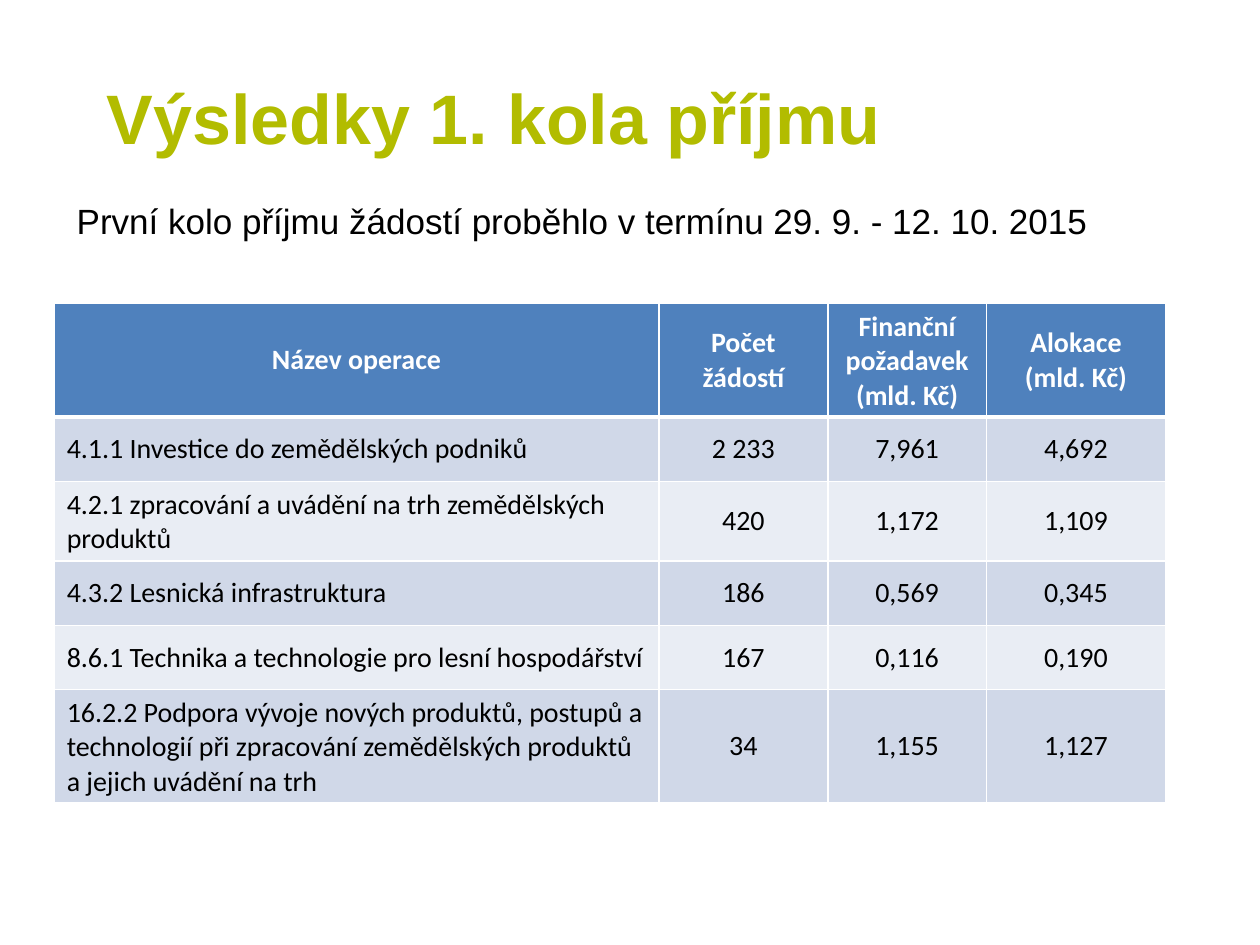
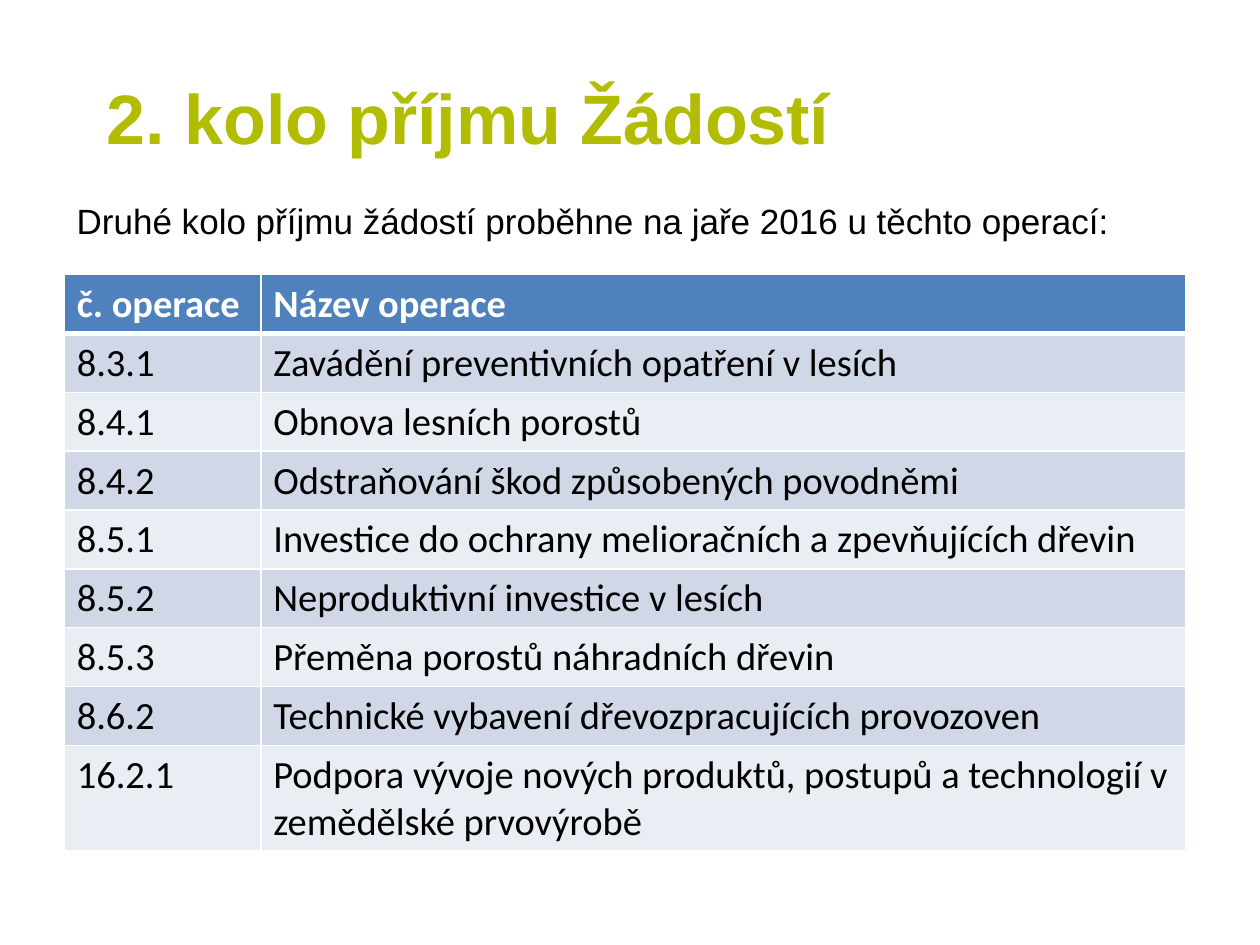
from dataclasses import dataclass

from lxml import etree
from pptx import Presentation
from pptx.dml.color import RGBColor
from pptx.enum.text import MSO_ANCHOR, PP_ALIGN
from pptx.oxml.ns import qn
from pptx.slide import Slide
from pptx.table import _Cell
from pptx.util import Pt

LEFT, CENTER = PP_ALIGN.LEFT, PP_ALIGN.CENTER
TOP, MIDDLE = MSO_ANCHOR.TOP, MSO_ANCHOR.MIDDLE
BLANK_LAYOUT = 6


@dataclass(frozen=True)
class Theme:
    title_color: str = "B2BC00"
    text_color: str = "000000"
    header_text: str = "FFFFFF"
    header_fill: str = "4F81BD"
    band_fills: tuple[str, str] = ("D0D8E8", "E9EDF4")
    grid_color: str = "FFFFFF"
    grid_width: float = 1
    header_rule: float = 3
    text_font: str = "Arial"
    table_font: str = "Calibri"
    title_size: float = 40
    lead_size: float = 20


THEME = Theme()


@dataclass(frozen=True)
class Box:
    left: float
    top: float
    width: float
    height: float

    def emu(self) -> tuple[Pt, Pt, Pt, Pt]:
        return Pt(self.left), Pt(self.top), Pt(self.width), Pt(self.height)


@dataclass(frozen=True)
class TextStyle:
    size: float
    color: str
    font: str
    bold: bool = False


@dataclass(frozen=True)
class OperationTable:
    box: Box
    columns: tuple[float, ...]
    row_heights: tuple[float, ...]
    size: float
    anchor: MSO_ANCHOR
    header_align: PP_ALIGN
    value_align: PP_ALIGN
    rows: tuple[tuple[str, ...], ...]


@dataclass(frozen=True)
class RoundSlide:
    title: str
    lead: str
    operations: OperationTable


# Shared frame of both slides
TITLE_BOX = Box(54, 21.6, 583.92, 90)
LEAD_BOX = Box(36.72, 105.84, 635.04, 368.64)
TITLE_STYLE = TextStyle(THEME.title_size, THEME.title_color, THEME.text_font, True)
LEAD_STYLE = TextStyle(THEME.lead_size, THEME.text_color, THEME.text_font)

# Content
ROUNDS = (
    RoundSlide(
        "Výsledky 1. kola příjmu",
        "První kolo příjmu žádostí proběhlo v termínu 29. 9. - 12. 10. 2015",
        OperationTable(
            box=Box(30.96, 173.52, 635.04, 285.84),
            columns=(345.6, 96.48, 90.72, 102.24),
            row_heights=(36.72,) * 6,
            size=16,
            anchor=MIDDLE,
            header_align=CENTER,
            value_align=CENTER,
            rows=(
                ("Název operace", "Počet žádostí",
                 "Finanční požadavek (mld. Kč)", "Alokace (mld. Kč)"),
                ("4.1.1 Investice do zemědělských podniků", "2 233", "7,961", "4,692"),
                ("4.2.1 zpracování a uvádění na trh zemědělských produktů",
                 "420", "1,172", "1,109"),
                ("4.3.2 Lesnická infrastruktura", "186", "0,569", "0,345"),
                ("8.6.1 Technika a technologie pro lesní hospodářství",
                 "167", "0,116", "0,190"),
                ("16.2.2 Podpora vývoje nových produktů, postupů a technologií při "
                 "zpracování zemědělských produktů a jejich uvádění na trh",
                 "34", "1,155", "1,127"),
            ),
        ),
    ),
    RoundSlide(
        "2. kolo příjmu Žádostí",
        "Druhé kolo příjmu žádostí proběhne na jaře 2016 u těchto operací:",
        OperationTable(
            box=Box(36.72, 156.96, 640.8, 329.04),
            columns=(112.32, 528.48),
            row_heights=(21.6,) * 8 + (36,),
            size=22,
            anchor=TOP,
            header_align=LEFT,
            value_align=LEFT,
            rows=(
                ("č. operace", "Název operace"),
                ("8.3.1", "Zavádění preventivních opatření v lesích"),
                ("8.4.1", "Obnova lesních porostů"),
                ("8.4.2", "Odstraňování škod způsobených povodněmi"),
                ("8.5.1", "Investice do ochrany melioračních a zpevňujících dřevin"),
                ("8.5.2", "Neproduktivní investice v lesích"),
                ("8.5.3", "Přeměna porostů náhradních dřevin"),
                ("8.6.2", "Technické vybavení dřevozpracujících provozoven"),
                ("16.2.1", "Podpora vývoje nových produktů, postupů a technologií "
                 "v zemědělské prvovýrobě"),
            ),
        ),
    ),
)


# Drawing functions
def write(frame, text: str, style: TextStyle, align: PP_ALIGN = LEFT,
          line_spacing: float = 1.0) -> None:
    paragraph = frame.paragraphs[0]
    paragraph.text = text
    paragraph.alignment = align
    paragraph.line_spacing = line_spacing
    font = paragraph.font
    font.name, font.size, font.bold = style.font, Pt(style.size), style.bold
    font.color.rgb = RGBColor.from_string(style.color)


def add_text(slide: Slide, box: Box, text: str, style: TextStyle,
             anchor: MSO_ANCHOR = TOP, line_spacing: float = 1.0) -> None:
    frame = slide.shapes.add_textbox(*box.emu()).text_frame
    frame.word_wrap = True
    frame.vertical_anchor = anchor
    write(frame, text, style, line_spacing=line_spacing)


def set_borders(cell: _Cell, top: float, bottom: float) -> None:
    properties = cell._tc.get_or_add_tcPr()
    widths = {"a:lnL": THEME.grid_width, "a:lnR": THEME.grid_width,
              "a:lnT": top, "a:lnB": bottom}
    for tag, width in widths.items():
        line = etree.SubElement(properties, qn(tag), w=str(Pt(width)))
        fill = etree.SubElement(line, qn("a:solidFill"))
        etree.SubElement(fill, qn("a:srgbClr"), val=THEME.grid_color)


def add_operations(slide: Slide, operations: OperationTable) -> None:
    graphic = slide.shapes.add_table(
        len(operations.rows), len(operations.columns), *operations.box.emu())
    table = graphic.table
    for column, width in zip(table.columns, operations.columns):
        column.width = Pt(width)
    for row, height in zip(table.rows, operations.row_heights):
        row.height = Pt(height)
    graphic.height = Pt(operations.box.height)

    for r, texts in enumerate(operations.rows):
        is_header = r == 0
        fill = THEME.header_fill if is_header else THEME.band_fills[(r - 1) % 2]
        color = THEME.header_text if is_header else THEME.text_color
        style = TextStyle(operations.size, color, THEME.table_font, is_header)
        top = THEME.header_rule if r == 1 else THEME.grid_width
        bottom = THEME.header_rule if is_header else THEME.grid_width
        for c, text in enumerate(texts):
            cell = table.cell(r, c)
            set_borders(cell, top, bottom)
            cell.fill.solid()
            cell.fill.fore_color.rgb = RGBColor.from_string(fill)
            cell.vertical_anchor = operations.anchor
            if is_header:
                align = operations.header_align
            else:
                align = operations.value_align if c else LEFT
            write(cell.text_frame, text, style, align)


def main() -> None:
    deck = Presentation()
    deck.slide_width, deck.slide_height = Pt(720), Pt(540)
    for content in ROUNDS:
        slide = deck.slides.add_slide(deck.slide_layouts[BLANK_LAYOUT])
        add_text(slide, TITLE_BOX, content.title, TITLE_STYLE, anchor=MIDDLE)
        add_text(slide, LEAD_BOX, content.lead, LEAD_STYLE, line_spacing=1.2)
        add_operations(slide, content.operations)
    deck.save("out.pptx")


if __name__ == "__main__":
    main()
